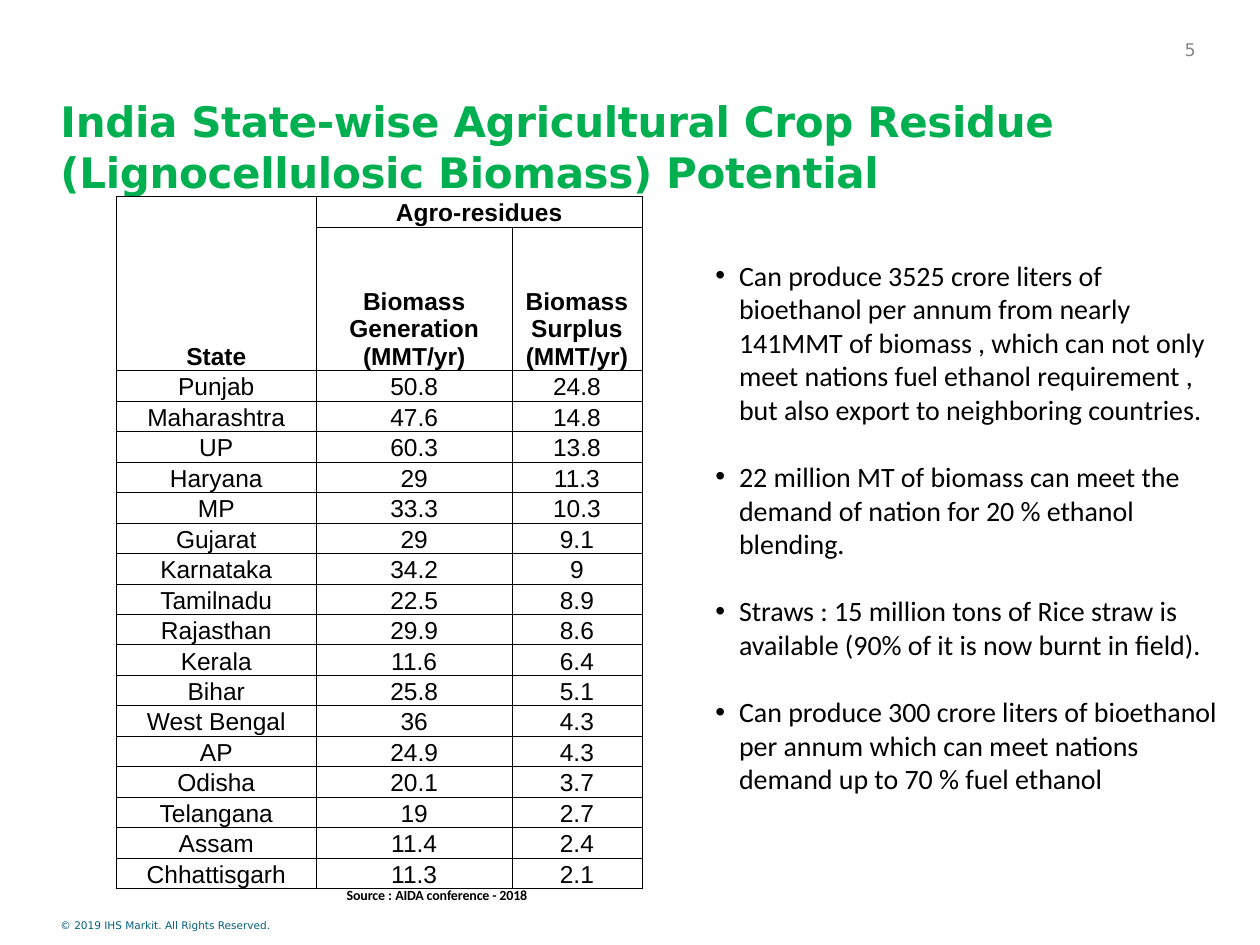
from dataclasses import dataclass
from lxml import etree
from pptx import Presentation
from pptx.dml.color import RGBColor
from pptx.enum.text import MSO_ANCHOR, MSO_AUTO_SIZE, PP_ALIGN
from pptx.oxml.ns import qn
from pptx.util import Cm, Pt

BOTTOM = MSO_ANCHOR.BOTTOM
CENTER = PP_ALIGN.CENTER
GROW = MSO_AUTO_SIZE.SHAPE_TO_FIT_TEXT


@dataclass(frozen=True)
class Theme:
    black: str = "000000"
    green: str = "00AF50"
    gray: str = "888888"
    teal: str = "04607A"
    heading: str = "DejaVu Sans"
    body: str = "Calibri"
    grid: str = "Arial"
    title_size: float = 24
    body_size: float = 16
    table_size: float = 14
    number_size: float = 10
    source_size: float = 8
    footer_size: float = 6


theme = Theme()


def add_span(para, text, name, size, color, bold=False, spacing=0):
    span = para.add_run()
    span.text = text
    for key, value in {"name": name, "size": Pt(size), "bold": bold}.items():
        setattr(span.font, key, value)
    span.font.color.rgb = RGBColor.from_string(color)
    if spacing:
        span._r.get_or_add_rPr().set("spc", str(spacing))


def add_box(slide, left, top, width, height, inset=True):
    box = slide.shapes.add_textbox(Cm(left), Cm(top), Cm(width), Cm(height))
    frame = box.text_frame
    formats = {"word_wrap": True, "auto_size": GROW}
    if not inset:
        formats.update(margin_left=0, margin_top=0, margin_right=0, margin_bottom=0)
    for key, value in formats.items():
        setattr(frame, key, value)
    return frame


deck = Presentation()
deck.slide_width, deck.slide_height = Cm(25.4), Cm(19.05)
page = deck.slides.add_slide(deck.slide_layouts[6])

labels = [
    ((1.22, 18.52, 4.39, 0.28), "© 2019 IHS Markit. All Rights Reserved.",
     (theme.heading, theme.footer_size, theme.teal)),
    ((23.88, 0.79, 0.3, 0.43), "5",
     (theme.heading, theme.number_size, theme.gray, False, -10)),
    ((1.22, 1.93, 23.93, 2.06),
     "India State-wise Agricultural Crop Residue (Lignocellulosic Biomass) Potential",
     (theme.heading, theme.title_size, theme.green, True, -20)),
]
for place, text, style in labels:
    frame = add_box(page, *place, inset=False)
    add_span(frame.paragraphs[0], text, *style)

rows = [
    ("State", "Agro-residues", ""),
    ("", "Biomass Generation (MMT/yr)", "Biomass Surplus (MMT/yr)"),
    ("Punjab", "50.8", "24.8"),
    ("Maharashtra", "47.6", "14.8"),
    ("UP", "60.3", "13.8"),
    ("Haryana", "29", "11.3"),
    ("MP", "33.3", "10.3"),
    ("Gujarat", "29", "9.1"),
    ("Karnataka", "34.2", "9"),
    ("Tamilnadu", "22.5", "8.9"),
    ("Rajasthan", "29.9", "8.6"),
    ("Kerala", "11.6", "6.4"),
    ("Bihar", "25.8", "5.1"),
    ("West Bengal", "36", "4.3"),
    ("AP", "24.9", "4.3"),
    ("Odisha", "20.1", "3.7"),
    ("Telangana", "19", "2.7"),
    ("Assam", "11.4", "2.4"),
    ("Chhattisgarh", "11.3", "2.1"),
]
column_widths = [4.04, 3.94, 2.62]
row_height, header_height = 0.61, 2.9
table = page.shapes.add_table(
    len(rows), len(column_widths), Cm(2.34), Cm(3.96), Cm(sum(column_widths)),
    Cm(row_height * (len(rows) - 1) + header_height)).table
table.first_row = table.horz_banding = False
for column, width in zip(table.columns, column_widths):
    column.width = Cm(width)
for index, row in enumerate(table.rows):
    row.height = Cm(header_height if index == 1 else row_height)
table.cell(0, 0).merge(table.cell(1, 0))
table.cell(0, 1).merge(table.cell(0, 2))

cell_format = {
    "vertical_anchor": BOTTOM, "margin_left": Cm(0.02),
    "margin_right": Cm(0.02), "margin_top": Cm(0.02), "margin_bottom": 0,
}
for row_index, row in enumerate(rows):
    for column_index, text in enumerate(row):
        cell = table.cell(row_index, column_index)
        for key, value in cell_format.items():
            setattr(cell, key, value)
        properties = cell._tc.get_or_add_tcPr()
        for side in ("lnL", "lnR", "lnT", "lnB"):
            line = etree.SubElement(properties, qn(f"a:{side}"), w=str(Pt(0.5)))
            fill = etree.SubElement(line, qn("a:solidFill"))
            etree.SubElement(fill, qn("a:srgbClr"), val=theme.black)
        cell.fill.background()
        para = cell.text_frame.paragraphs[0]
        para.alignment = CENTER
        if text:
            add_span(para, text, theme.grid, theme.table_size, theme.black, row_index < 2)

source = add_box(page, 6.99, 17.88, 11.43, 0.33, inset=False).paragraphs[0]
for text, spacing in [("Source ", -10), (": ", 0), ("AIDA conference - 2018", -10)]:
    add_span(source, text, theme.body, theme.source_size, theme.black, True, spacing)

points = [
    "Can produce 3525 crore liters of bioethanol per annum from nearly 141MMT of biomass , "
    "which can not only meet nations fuel ethanol requirement , "
    "but also export to neighboring countries.",
    "22 million MT of biomass can meet the demand of nation for 20 % ethanol blending.",
    "Straws : 15 million tons of Rice straw is available (90% of it is now burnt in field).",
    "Can produce 300 crore liters of bioethanol per annum which can meet nations demand "
    "up to 70 % fuel ethanol",
]
frame = add_box(page, 14.17, 5.08, 10.8, 11.2)
for index, text in enumerate(points):
    para = frame.add_paragraph() if index else frame.paragraphs[0]
    properties = para._p.get_or_add_pPr()
    properties.set("marL", str(Cm(0.48)))
    properties.set("indent", str(-Cm(0.48)))
    etree.SubElement(properties, qn("a:buFont"), typeface=theme.grid)
    etree.SubElement(properties, qn("a:buChar"), char="•")
    if index:
        para.space_before = Pt(19.2)
    add_span(para, text, theme.body, theme.body_size, theme.black)

deck.save("out.pptx")
